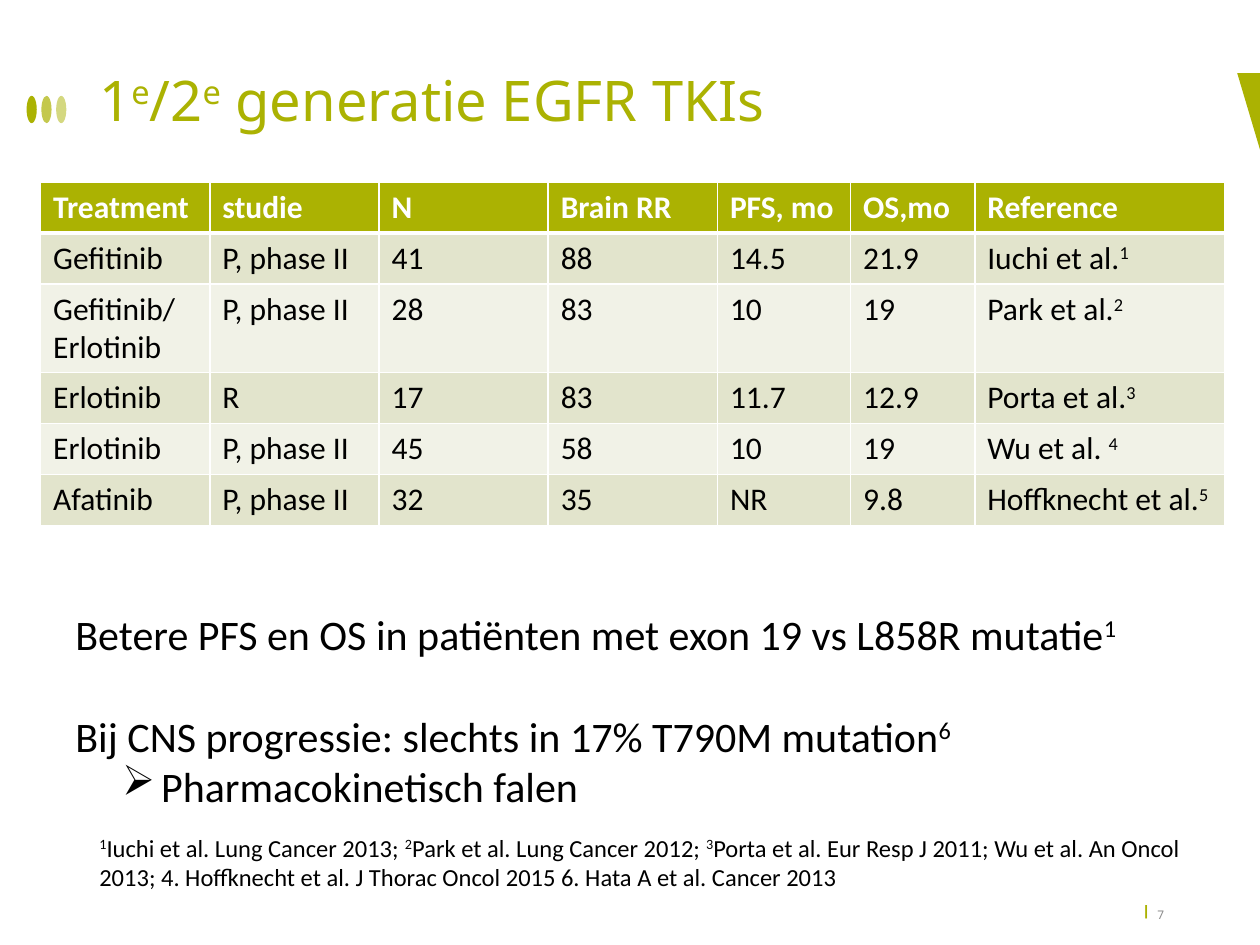
import lxml.etree
import pptx
import pptx.dml.color
import pptx.enum.shapes
import pptx.enum.text
import pptx.oxml
import pptx.oxml.ns
import pptx.util

Pt = pptx.util.Pt
RGB = pptx.dml.color.RGBColor
ALIGN = pptx.enum.text.PP_ALIGN
ANCHOR = pptx.enum.text.MSO_ANCHOR
qn = pptx.oxml.ns.qn

GREEN = RGB(0xAB, 0xB2, 0x02)
WHITE = RGB(0xFF, 0xFF, 0xFF)
BLACK = RGB(0, 0, 0)
GREY = RGB(0x8C, 0x8C, 0x8C)
BANDS = [RGB(0xE2, 0xE4, 0xCC), RGB(0xF1, 0xF2, 0xE7)]
HEAD = "Calibri"
SANS = "Noto Sans"

# Text between ^ marks is superscript.
ROWS = [
    ["Treatment", "studie", "N", "Brain RR", "PFS, mo", "OS,mo", "Reference"],
    ["Gefitinib", "P, phase II", "41", "88", "14.5", "21.9", "Iuchi et al.^1^"],
    ["Gefitinib/Erlotinib", "P, phase II", "28", "83", "10", "19", "Park et al.^2^"],
    ["Erlotinib", "R", "17", "83", "11.7", "12.9", "Porta et al.^3^"],
    ["Erlotinib", "P, phase II", "45", "58", "10", "19", "Wu et al. ^4^"],
    ["Afatinib", "P, phase II", "32", "35", "NR", "9.8", "Hoffknecht et al.^5^"],
]
WIDTHS = [96.7, 96.7, 96.7, 96.7, 76.1, 71, 143]
POINTS = [
    "Betere PFS en OS in patiënten met exon 19 vs L858R mutatie^1^",
    "Bij CNS progressie: slechts in 17% T790M mutation^6^",
    "Pharmacokinetisch falen",
]
SOURCES = (
    "^1^Iuchi et al. Lung Cancer 2013; ^2^Park et al. Lung Cancer 2012; "
    "^3^Porta et al. Eur Resp J 2011; Wu et al. An Oncol 2013; "
    "4. Hoffknecht et al. J Thorac Oncol 2015 6. Hata A et al. Cancer 2013"
)


def write(para, text, size, color, face=HEAD, bold=False):
    """Fill a paragraph, raising the parts between ^ marks."""
    for i, part in enumerate(text.split("^")):
        if not part:
            continue
        run = para.add_run()
        run.text = part
        font = run.font
        font.size, font.name, font.bold = Pt(size), face, bold
        font.color.rgb = color
        if i % 2:
            run._r.get_or_add_rPr().set("baseline", "30000")


def add_text(slide, place, lines, size, color, face=HEAD, inset=(7.2, 3.6)):
    """Add a text box; return the shape."""
    box = slide.shapes.add_textbox(*map(Pt, place))
    frame = box.text_frame
    frame.word_wrap = True
    frame.margin_left = frame.margin_right = Pt(inset[0])
    frame.margin_top = frame.margin_bottom = Pt(inset[1])
    for i, line in enumerate(lines):
        para = frame.add_paragraph() if i else frame.paragraphs[0]
        write(para, line, size, color, face)
    return box


def set_bullet(para, char, left, hang):
    props = para._p.get_or_add_pPr()
    props.set("marL", str(Pt(left)))
    props.set("indent", str(-Pt(hang)))
    lxml.etree.SubElement(props, qn("a:buChar")).set("char", char)


def paint(shape, alpha=100):
    """Give a shape a plain green fill without line or shadow."""
    shape.shadow.inherit = False
    shape.line.fill.background()
    shape.fill.solid()
    shape.fill.fore_color.rgb = GREEN
    if alpha < 100:
        color = shape._element.spPr.find(".//" + qn("a:srgbClr"))
        lxml.etree.SubElement(color, qn("a:alpha")).set("val", str(alpha * 1000))


def add_marks(slide):
    """Add the green corner and the three fading ovals."""
    pen = slide.shapes.build_freeform(Pt(707), Pt(41.8), scale=1)
    pen.add_line_segments([(Pt(720), Pt(41.8)), (Pt(720), Pt(85.5))])
    paint(pen.convert_to_shape())
    oval = pptx.enum.shapes.MSO_SHAPE.OVAL
    for i, alpha in enumerate([100, 70, 50]):
        place = (15.2 + 8.45 * i, 54.8, 5.8, 15.6)
        paint(slide.shapes.add_shape(oval, *map(Pt, place)), alpha)


def set_edges(cell, top, base):
    """Draw white borders, with given widths above and below."""
    props = cell._tc.get_or_add_tcPr()
    for i, (side, width) in enumerate(zip("LRTB", [1, 1, top, base])):
        edge = lxml.etree.Element(qn("a:ln" + side), w=str(Pt(width)))
        fill = lxml.etree.SubElement(edge, qn("a:solidFill"))
        lxml.etree.SubElement(fill, qn("a:srgbClr")).set("val", str(WHITE))
        props.insert(i, edge)


def add_grid(slide):
    place = (23.2, 104, sum(WIDTHS), 29.2 * len(ROWS))
    grid = slide.shapes.add_table(len(ROWS), len(WIDTHS), *map(Pt, place)).table
    for col, width in zip(grid.columns, WIDTHS):
        col.width = Pt(width)
    for r, row in enumerate(ROWS):
        grid.rows[r].height = Pt(29.2)
        for c, text in enumerate(row):
            cell = grid.cell(r, c)
            cell.fill.solid()
            cell.fill.fore_color.rgb = BANDS[(r - 1) % 2] if r else GREEN
            set_edges(cell, 3 if r == 1 else 1, 1 if r else 3)
            para = cell.text_frame.paragraphs[0]
            write(para, text, 18, BLACK if r else WHITE, bold=not r)


def main():
    deck = pptx.Presentation()
    deck.slide_width, deck.slide_height = Pt(720), Pt(540)
    slide = deck.slides.add_slide(deck.slide_layouts[6])
    add_marks(slide)

    tick = add_text(slide, (651, 514.8, 8, 14.4), ["I"], 12, GREEN, inset=(0, 0))
    tick.rotation = 180
    tick.text_frame.paragraphs[0].alignment = ALIGN.CENTER

    title = add_text(slide, (49.7, 23.8, 617, 56.2),
                     ["1^e^/2^e^ generatie EGFR TKIs"], 32, GREEN, SANS)
    title.text_frame.vertical_anchor = ANCHOR.BOTTOM
    title.text_frame.paragraphs[0].line_spacing = 0.9

    add_grid(slide)

    number = add_text(slide, (645.8, 515.5, 26.6, 14.4), ["7"], 6.8, GREY, SANS,
                      inset=(7.2, 0))
    number.text_frame.vertical_anchor = ANCHOR.MIDDLE
    number.text_frame.paragraphs[0].alignment = ALIGN.RIGHT

    body = add_text(slide, (36, 344.2, 630, 165), POINTS, 24, BLACK)
    paras = body.text_frame.paragraphs
    paras[1].space_before = Pt(29.3)
    paras[2].level = 2
    set_bullet(paras[2], "➢", 49, 22.3)

    add_text(slide, (49.7, 472.3, 636.5, 58.3), [SOURCES], 14, BLACK)
    deck.save("out.pptx")


if __name__ == "__main__":
    main()
